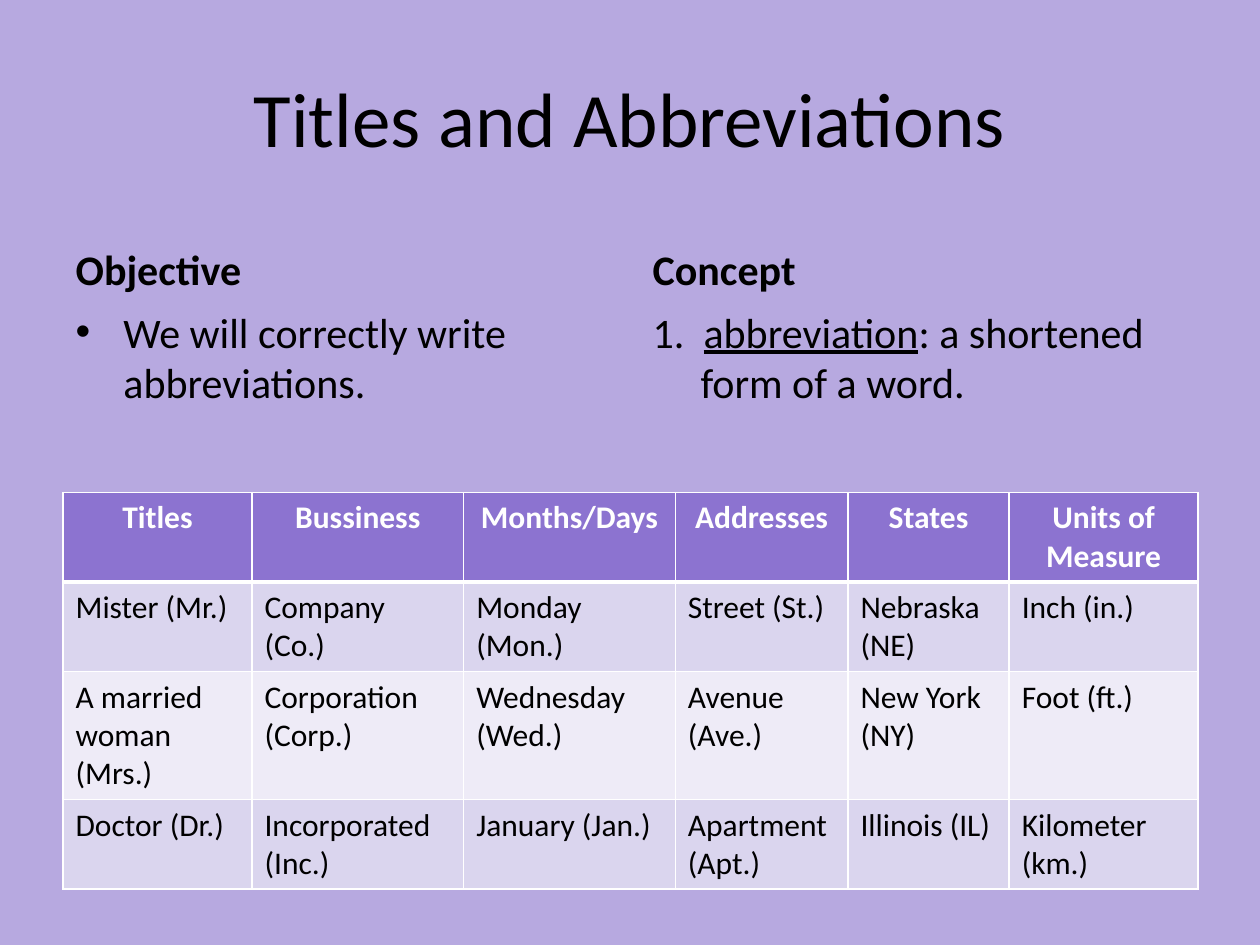
from pptx import Presentation
from pptx.dml.color import RGBColor
from pptx.enum.text import MSO_ANCHOR, PP_ALIGN
from pptx.oxml.ns import qn
from pptx.util import Inches, Pt
from lxml.etree import SubElement

COLORS = {
    "background": "B7A9E0",
    "header": "8C73D0",
    "odd": "DAD5EE",
    "even": "EEEBF7",
    "text": "000000",
    "light": "FFFFFF",
}


def add_run(paragraph, text, size, color="text", bold=False, underline=False):
    run = paragraph.add_run()
    run.text = text
    run.font.name = "Calibri"
    run.font.size = Pt(size)
    run.font.bold = bold
    run.font.underline = underline
    run.font.color.rgb = RGBColor.from_string(COLORS[color])


def add_border(cell, side, width):
    line = SubElement(cell._tc.get_or_add_tcPr(), qn(f"a:{side}"), w=str(Pt(width)))
    fill = SubElement(line, qn("a:solidFill"))
    SubElement(fill, qn("a:srgbClr"), val=COLORS["light"])


deck = Presentation()
deck.slide_width, deck.slide_height = Inches(10), Inches(7.5)
W, H = deck.slide_width, deck.slide_height
margin = int(W * 0.05)
content_width = W - 2 * margin
column_width = int(W * 0.442)
column_lefts = [margin, W - margin - column_width]

slide = deck.slides.add_slide(deck.slide_layouts[4])
slide.background.fill.solid()
slide.background.fill.fore_color.rgb = RGBColor.from_string(COLORS["background"])

title = slide.shapes.title
title.left, title.top, title.width, title.height = margin, int(H * 0.04), content_width, Inches(1.25)
title.text_frame.vertical_anchor = MSO_ANCHOR.MIDDLE
title_line = title.text_frame.paragraphs[0]
title_line.alignment = PP_ALIGN.CENTER
add_run(title_line, "Titles and Abbreviations", 44)

sections = [
    ("Objective", [("We will correctly write abbreviations.", False)], True),
    ("Concept", [("1.  ", False), ("abbreviation", True), (": a shortened form of a word.", False)], False),
]
for number, (heading_text, body_runs, bulleted) in enumerate(sections):
    heading = slide.placeholders[1 + 2 * number]
    body = slide.placeholders[2 + 2 * number]
    for part, top, height in [(heading, 1.68, 0.7), (body, 2.38, 4.32)]:
        part.left, part.width = column_lefts[number], column_width
        part.top, part.height = Inches(top), Inches(height)
    heading.text_frame.vertical_anchor = MSO_ANCHOR.BOTTOM
    add_run(heading.text_frame.paragraphs[0], heading_text, 24, bold=True)

    sentence = body.text_frame.paragraphs[0]
    for text, underline in body_runs:
        add_run(sentence, text, 24, underline=underline)
    properties = sentence._p.get_or_add_pPr()
    properties.set("marL", str(Inches(0.38)))
    properties.set("indent", str(-Inches(0.38)))
    if bulleted:
        SubElement(properties, qn("a:buFont"), typeface="Arial")
        SubElement(properties, qn("a:buChar"), char="•")
    else:
        SubElement(properties, qn("a:buNone"))

rows = [
    ["Titles", "Bussiness", "Months/Days", "Addresses", "States", "Units of Measure"],
    ["Mister (Mr.)", "Company (Co.)", "Monday (Mon.)", "Street (St.)", "Nebraska (NE)", "Inch (in.)"],
    ["A married woman (Mrs.)", "Corporation (Corp.)", "Wednesday (Wed.)", "Avenue (Ave.)", "New York (NY)", "Foot (ft.)"],
    ["Doctor (Dr.)", "Incorporated (Inc.)", "January (Jan.)", "Apartment (Apt.)", "Illinois (IL)", "Kilometer (km.)"],
]
column_shares = [0.15, 0.168, 0.168, 0.137, 0.128, 0.15]
table_frame = slide.shapes.add_table(len(rows), len(column_shares), margin, Inches(3.91), content_width, Inches(3.1))
abbreviations = table_frame.table
for column, share in zip(abbreviations.columns, column_shares):
    column.width = int(W * share)

for r, entries in enumerate(rows):
    abbreviations.rows[r].height = Inches(0.41)
    is_header = r == 0
    band = "header" if is_header else "odd" if r % 2 else "even"
    for c, entry in enumerate(entries):
        cell = abbreviations.cell(r, c)
        for side in ["lnL", "lnR", "lnT", "lnB"]:
            thick = (r, side) in [(0, "lnB"), (1, "lnT")]
            add_border(cell, side, 3 if thick else 1)
        cell.fill.solid()
        cell.fill.fore_color.rgb = RGBColor.from_string(COLORS[band])
        label = cell.text_frame.paragraphs[0]
        label.alignment = PP_ALIGN.CENTER if is_header else PP_ALIGN.LEFT
        add_run(label, entry, 18, "light" if is_header else "text", bold=is_header)
table_frame.height = Inches(3.1)

deck.save("out.pptx")
